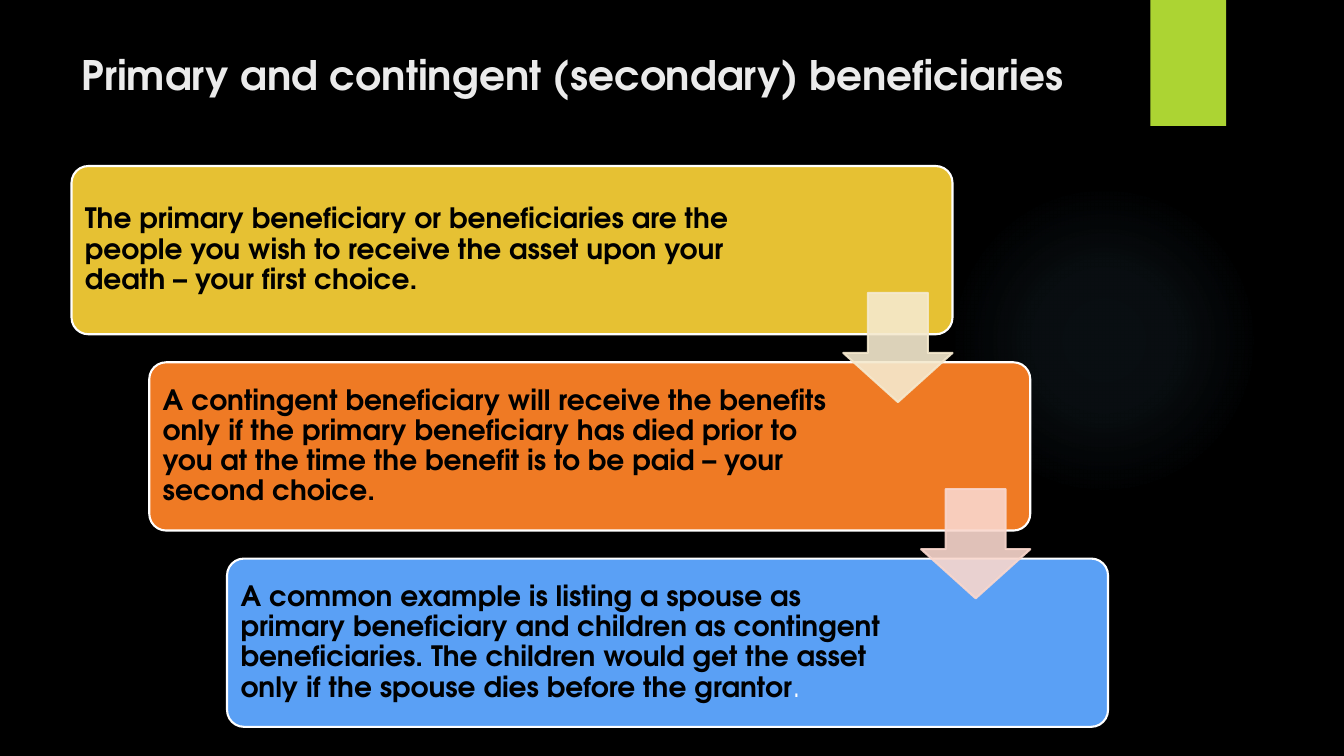
from pptx import Presentation
from pptx.dml.color import RGBColor
from pptx.enum.shapes import MSO_SHAPE
from pptx.enum.text import MSO_ANCHOR
from pptx.oxml import parse_xml
from pptx.oxml.ns import nsdecls, qn
from pptx.util import Pt

CARD_WIDTH, CARD_HEIGHT = 629.3, 120.2
CARD_LEFT, CARD_TOP = 51.1, 118.6
STEP_RIGHT, STEP_DOWN = 55.55, 140.2
TEXT_GAP = 3.6
ARROW_SIZE, ARROW_DROP = 78, 90.6

# fill, text width, text spans as (wording, colour, bold)
CARDS = [
    ("E6C133", 499.7, [(
        "The primary beneficiary or beneficiaries are the people you wish to "
        "receive the asset upon your death – your first choice.", "000000", True)]),
    ("EF7A24", 488.9, [(
        "A contingent beneficiary will receive the benefits only if the primary "
        "beneficiary has died prior to you at the time the benefit is to be paid "
        "– your second choice.", "000000", True)]),
    ("5AA0F5", 488.9, [
        ("A common example is listing a spouse as primary beneficiary and children "
         "as contingent beneficiaries. The children would get the asset only if the "
         "spouse dies before the grantor", "000000", True),
        (".", "FFFFFF", False)]),
]
ARROW_COLORS = ["F5E9CE", "F9D7CD"]


def color(code):
    return RGBColor.from_string(code)


class SlideBuilder:
    font_name = "TeX Gyre Adventor"

    def __init__(self, page):
        self.page = page

    def background(self, code):
        self.page.background.fill.solid()
        self.page.background.fill.fore_color.rgb = color(code)

    def shape(self, kind, left, top, width, height, fill=None, line=None, adjustments=()):
        shape = self.page.shapes.add_shape(kind, Pt(left), Pt(top), Pt(width), Pt(height))
        shape.shadow.inherit = False
        for index, value in enumerate(adjustments):
            shape.adjustments[index] = value
        if fill:
            shape.fill.solid()
            shape.fill.fore_color.rgb = color(fill)
        if line:
            shape.line.color.rgb = color(line)
            shape.line.width = Pt(1.5)
        else:
            shape.line.fill.background()
        return shape

    def glow(self, left, top, size, code, stops):
        """Add a circle fading outwards; stops are (position, opacity) in percent."""
        circle = self.shape(MSO_SHAPE.OVAL, left, top, size, size)
        stop_list = "".join(
            f'<a:gs pos="{position * 1000}"><a:srgbClr val="{code}">'
            f'<a:alpha val="{opacity * 1000}"/></a:srgbClr></a:gs>'
            for position, opacity in stops)
        gradient = parse_xml(
            f'<a:gradFill {nsdecls("a")} rotWithShape="1"><a:gsLst>{stop_list}</a:gsLst>'
            '<a:path path="circle"><a:fillToRect l="50000" t="50000" r="50000" b="50000"/>'
            '</a:path></a:gradFill>')
        circle.element.spPr.find(qn("a:prstGeom")).addnext(gradient)

    def arrow(self, left, top, size, code):
        """Add a down arrow at 90 % opacity."""
        arrow = self.shape(MSO_SHAPE.DOWN_ARROW, left, top, size, size, code, code, (0.55, 0.45))
        for tint in arrow.element.spPr.iter(qn("a:srgbClr")):
            tint.append(parse_xml(f'<a:alpha {nsdecls("a")} val="90000"/>'))

    def text(self, left, top, width, height, spans, size, anchor=MSO_ANCHOR.TOP, inset=None):
        box = self.page.shapes.add_textbox(Pt(left), Pt(top), Pt(width), Pt(height))
        frame = box.text_frame
        frame.word_wrap = True
        frame.vertical_anchor = anchor
        if inset is not None:
            frame.margin_left = frame.margin_right = Pt(inset)
            frame.margin_top = frame.margin_bottom = Pt(inset)
        para = frame.paragraphs[0]
        para.line_spacing = 0.9
        for wording, code, bold in spans:
            span = para.add_run()
            span.text = wording
            span.font.name = self.font_name
            span.font.size = Pt(size)
            span.font.bold = bold
            span.font.color.rgb = color(code)


def main():
    deck = Presentation()
    deck.slide_width, deck.slide_height = Pt(960), Pt(540)
    builder = SlideBuilder(deck.slides.add_slide(deck.slide_layouts[6]))

    builder.background("000000")
    builder.glow(677.5, 131.8, 221.8, "7AC4F0", [(0, 7), (36, 6), (69, 0)])
    builder.shape(MSO_SHAPE.RECTANGLE, 821.8, 0, 54, 90, "ACD433")
    builder.text(51.1, 36, 740.9, 110.2,
                 [("Primary and contingent (secondary) beneficiaries", "EBEBEB", True)], 29)

    for index, (fill, text_width, spans) in enumerate(CARDS):
        left, top = CARD_LEFT + index * STEP_RIGHT, CARD_TOP + index * STEP_DOWN
        builder.shape(MSO_SHAPE.ROUNDED_RECTANGLE, left, top, CARD_WIDTH, CARD_HEIGHT,
                      fill, "FFFFFF", (0.1,))
        builder.text(left + TEXT_GAP, top + TEXT_GAP, text_width, CARD_HEIGHT - 2 * TEXT_GAP,
                     spans, 20, MSO_ANCHOR.MIDDLE, 6)

    for index, code in enumerate(ARROW_COLORS):
        builder.arrow(CARD_LEFT + CARD_WIDTH - ARROW_SIZE + index * STEP_RIGHT,
                      CARD_TOP + ARROW_DROP + index * STEP_DOWN, ARROW_SIZE, code)

    deck.save("out.pptx")


if __name__ == "__main__":
    main()
